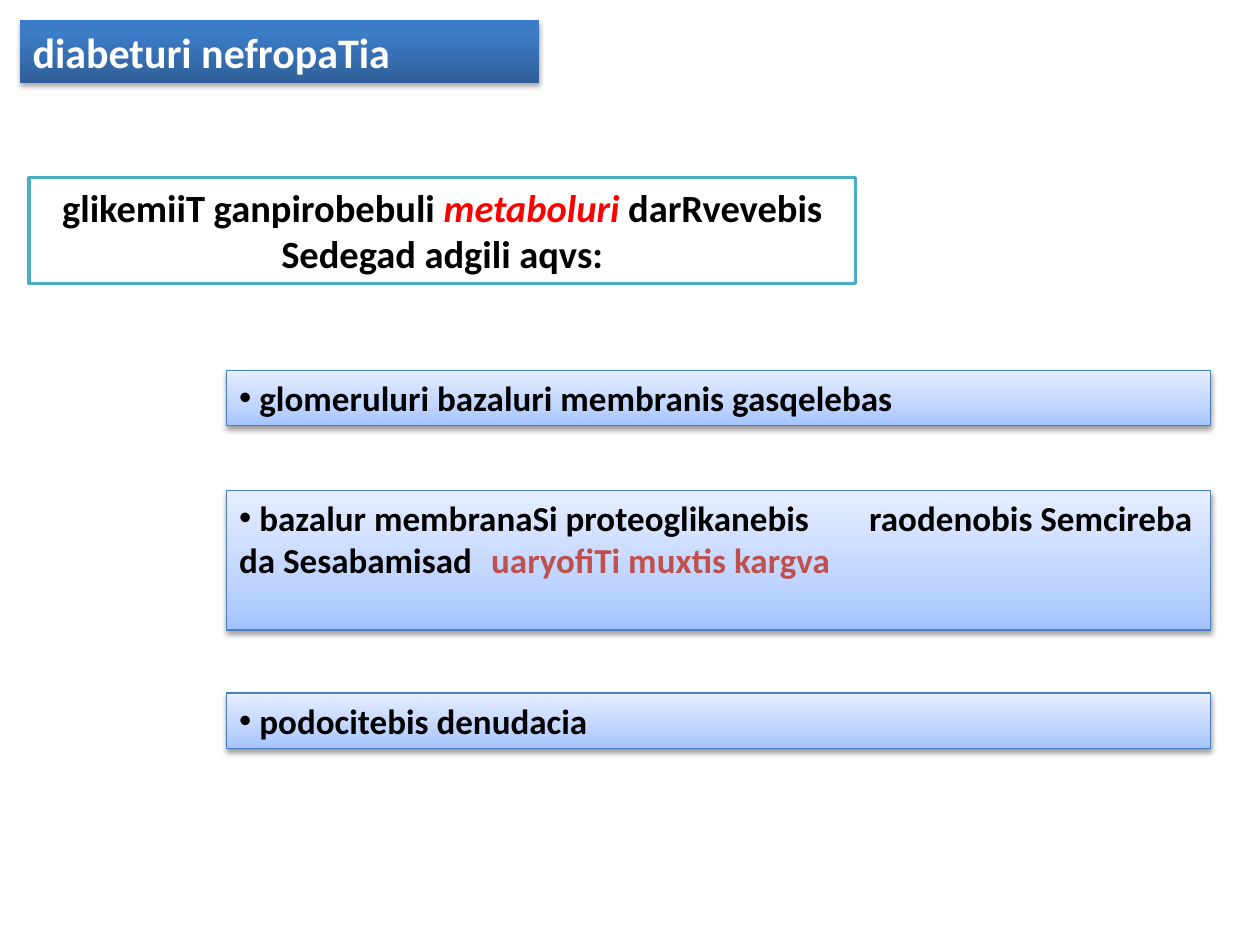
from lxml.etree import SubElement
from pptx import Presentation
from pptx.dml.color import RGBColor
from pptx.enum.shapes import MSO_SHAPE as SHAPE
from pptx.enum.text import MSO_ANCHOR as ANCHOR, PP_ALIGN as ALIGN
from pptx.oxml.ns import qn
from pptx.util import Inches, Pt

BLACK = RGBColor(0x00, 0x00, 0x00)
WHITE = RGBColor(0xFF, 0xFF, 0xFF)
RED = RGBColor(0xFF, 0x00, 0x00)
BRICK = RGBColor(0xC0, 0x50, 0x4D)
TEAL = RGBColor(0x4B, 0xAC, 0xC6)
BLUE = RGBColor(0x4B, 0x7E, 0xBC)
PALE_STOPS = [(0, RGBColor(0xA4, 0xC4, 0xFF)), (35, RGBColor(0xBF, 0xD4, 0xFF)),
              (100, RGBColor(0xE6, 0xEE, 0xFF))]
DARK_STOPS = [(0, RGBColor(0x2F, 0x5F, 0x99)), (80, RGBColor(0x3D, 0x7C, 0xC7)),
              (100, RGBColor(0x3A, 0x7C, 0xCB))]

prs = Presentation()
prs.slide_width, prs.slide_height = Inches(10), Inches(7.5)
s = prs.slides.add_slide(prs.slide_layouts[6])


def add_box(at, runs, size, line=None, width=0.75, align=ALIGN.LEFT, bullet=False):
    """Add a rectangle; each run is (text, colour, italic)."""
    sp = s.shapes.add_shape(SHAPE.RECTANGLE, *(Inches(v) for v in at))
    sp.shadow.inherit = False
    sp.fill.solid()
    sp.fill.fore_color.rgb = WHITE
    if line is None:
        sp.line.fill.background()
    else:
        sp.line.color.rgb = line
        sp.line.width = Pt(width)
    tf = sp.text_frame
    tf.word_wrap = True
    tf.vertical_anchor = ANCHOR.TOP
    p = tf.paragraphs[0]
    p.alignment = align
    if bullet:
        pPr = p._p.get_or_add_pPr()
        SubElement(pPr, qn("a:buFont"), typeface="Arial")
        SubElement(pPr, qn("a:buChar"), char="•")
    for text, color, italic in runs:
        r = p.add_run()
        r.text = text
        r.font.name, r.font.size = "Calibri", Pt(size)
        r.font.bold, r.font.italic = True, italic
        r.font.color.rgb = color
    return sp


def add_depth(sp, stops, opacity):
    """Give a box a bottom-to-top gradient and a soft shadow below it."""
    sp.fill.gradient()
    sp.fill.gradient_angle = 90
    spPr = sp._element.spPr
    gs_list = spPr.find(qn("a:gradFill")).find(qn("a:gsLst"))
    gs_list.clear()
    for percent, color in stops:
        gs = SubElement(gs_list, qn("a:gs"), pos=str(percent * 1000))
        SubElement(gs, qn("a:srgbClr"), val=str(color))
    shadow = SubElement(spPr.find(qn("a:effectLst")), qn("a:outerShdw"),
                        blurRad=str(Pt(3.1)), dist=str(Pt(1.7)),
                        dir="5400000", rotWithShape="0")
    black = SubElement(shadow, qn("a:srgbClr"), val=str(BLACK))
    SubElement(black, qn("a:alpha"), val=str(opacity * 1000))


add_box((0.23, 1.41, 6.56, 0.84),
        [("glikemiiT ganpirobebuli ", BLACK, False),
         ("metaboluri ", RED, True),
         ("darRvevebis Sedegad adgili aqvs:", BLACK, False)],
        size=22, line=TEAL, width=2, align=ALIGN.CENTER)

effects = [
    (2.94, 0.44, [(" glomeruluri bazaluri membranis gasqelebas", BLACK, False)]),
    (3.89, 1.11, [(" bazalur membranaSi proteoglikanebis \traodenobis Semcireba "
                   "da Sesabamisad \t", BLACK, False),
                  ("uaryofiTi muxtis kargva", BRICK, False)]),
    (5.5, 0.44, [(" podocitebis denudacia", BLACK, False)]),
]
for top, height, runs in effects:
    sp = add_box((1.8, top, 7.81, height), runs, size=20, line=BLUE, bullet=True)
    add_depth(sp, PALE_STOPS, opacity=38)

title = add_box((0.16, 0.16, 4.12, 0.5), [("diabeturi nefropaTia", WHITE, False)], size=24)
add_depth(title, DARK_STOPS, opacity=35)

prs.save("out.pptx")
